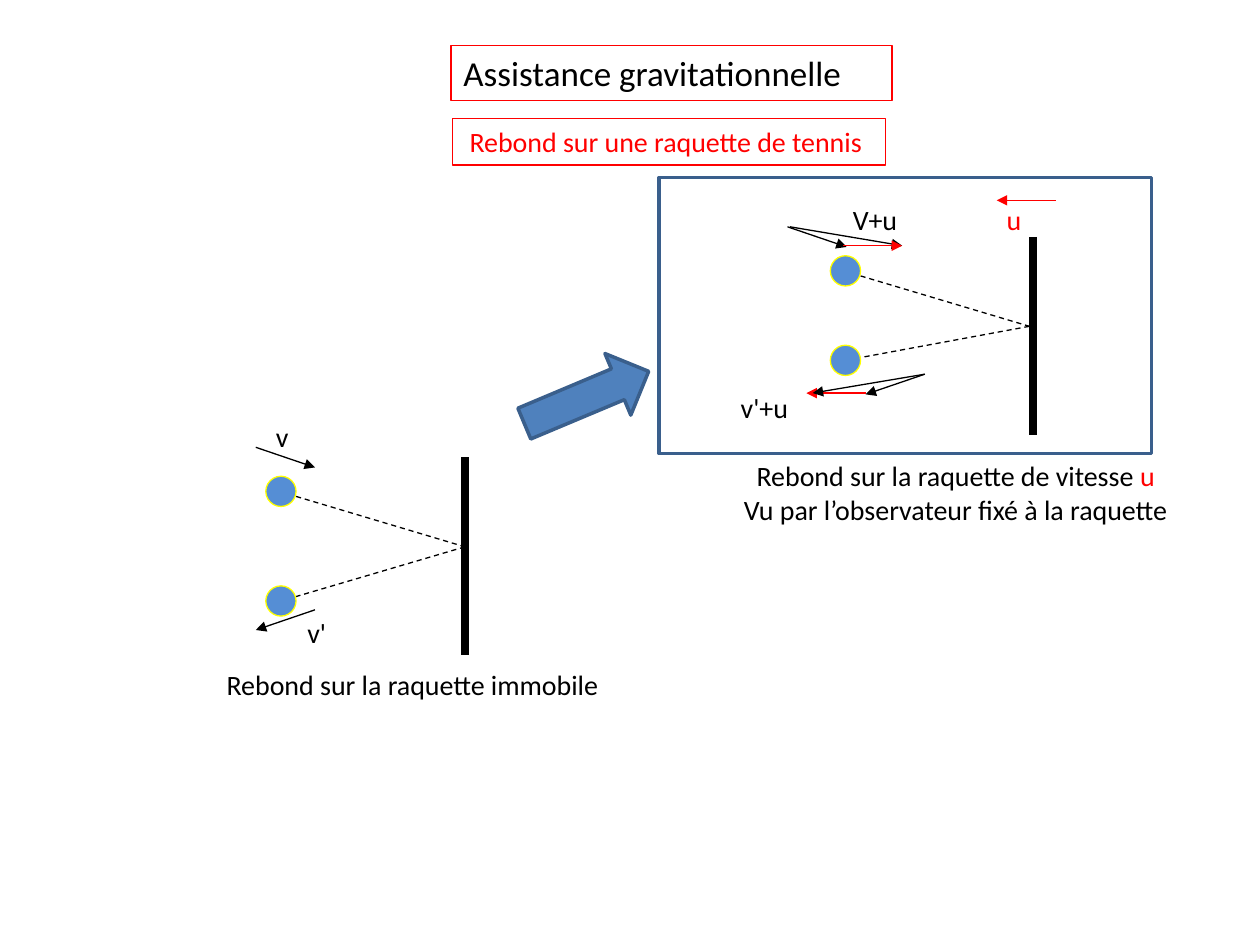
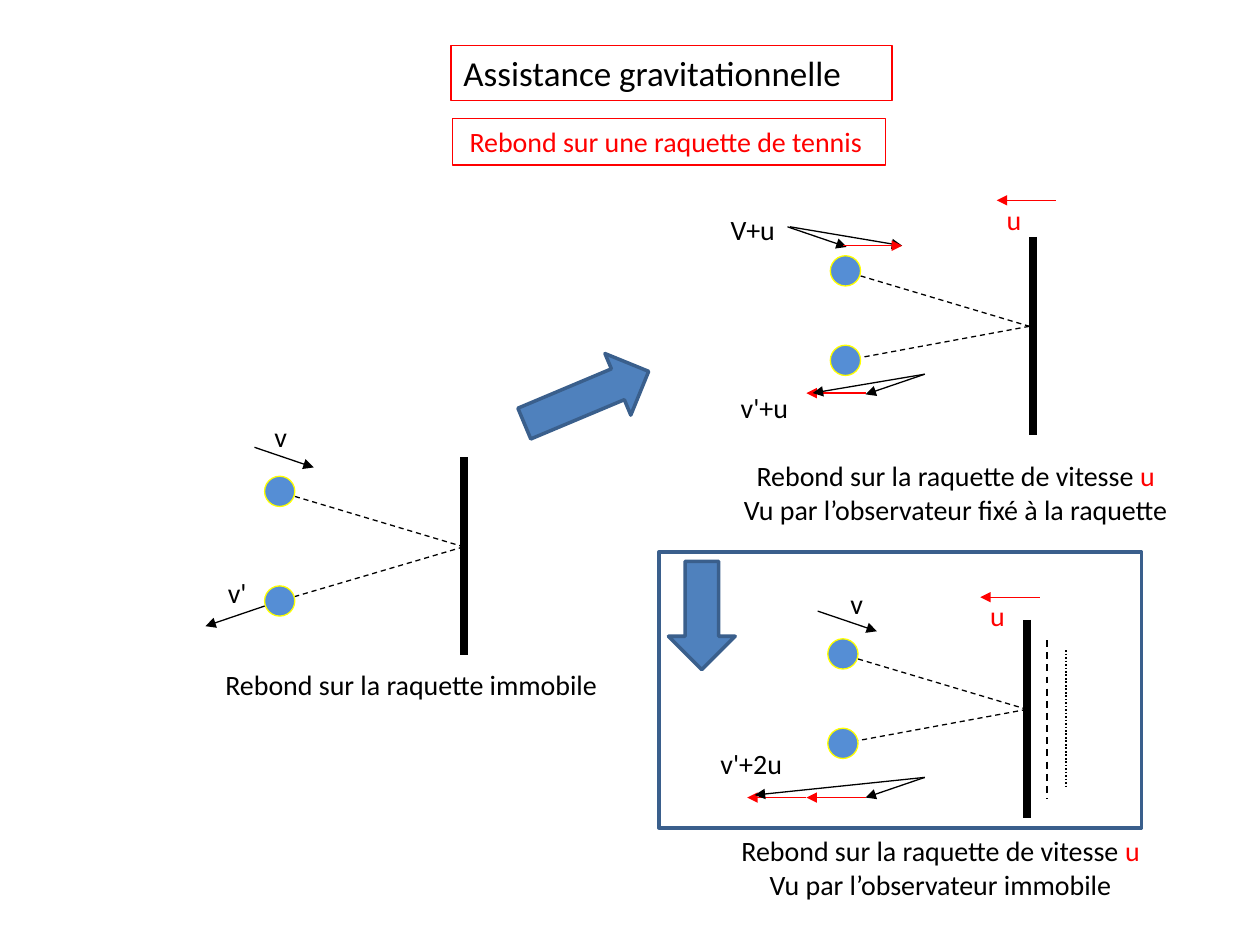
from lxml import etree
from pptx import Presentation
from pptx import util as u
from pptx.dml.color import RGBColor
from pptx.enum import dml, shapes, text
from pptx.oxml.ns import qn

BLACK = RGBColor(0x00, 0x00, 0x00)
RED = RGBColor(0xFF, 0x00, 0x00)
YELLOW = RGBColor(0xFF, 0xFF, 0x00)
BALL_BLUE = RGBColor(0x55, 0x8E, 0xD5)
ARROW_BLUE = RGBColor(0x4F, 0x81, 0xBD)
FRAME_BLUE = RGBColor(0x3A, 0x5F, 0x8C)

FONT = "Calibri"
LEFT, CENTER = text.PP_ALIGN.LEFT, text.PP_ALIGN.CENTER
DASH, DOTS = dml.MSO_LINE.DASH, dml.MSO_LINE.ROUND_DOT

# Velocity vectors and sizes, in inches
INCOMING = (0.47, 0.16)
RETURNING = (-0.47, 0.16)
RACKET_SPEED = (-0.47, 0)
BALL = 0.24
RACKET = 1.57
BALL_REACH = 1.58


class Sketch:
    """Holds the deck, the current slide and the drawing style."""

    def __init__(self):
        self.deck = Presentation()
        self.deck.slide_width = u.Inches(10)
        self.deck.slide_height = u.Inches(7.5)
        self.page = None

    def new_page(self):
        self.page = self.deck.slides.add_slide(self.deck.slide_layouts[6])

    def label(self, paragraphs, left, top, width, height=0.37, size=16,
              color=BLACK, align=LEFT, wrap=False, outline=None):
        """Each paragraph is a string or a list of (string, colour) spans."""
        box = self.page.shapes.add_textbox(*map(u.Inches, (left, top, width, height)))
        if outline is not None:
            box.line.color.rgb = outline
            box.line.width = u.Pt(0.75)
        frame = box.text_frame
        frame.word_wrap = wrap
        frame.auto_size = text.MSO_AUTO_SIZE.SHAPE_TO_FIT_TEXT
        for index, content in enumerate(paragraphs):
            para = frame.paragraphs[0] if index == 0 else frame.add_paragraph()
            para.alignment = align
            spans = [(content, color)] if isinstance(content, str) else content
            for words, shade in spans:
                span = para.add_run()
                span.text = words
                span.font.name = FONT
                span.font.size = u.Pt(size)
                span.font.color.rgb = shade

    def shape(self, kind, left, top, width, height, fill=None,
              line=FRAME_BLUE, weight=2, rotation=0):
        figure = self.page.shapes.add_shape(
            kind, *map(u.Inches, (left, top, width, height)))
        figure.shadow.inherit = False
        figure.rotation = rotation
        if fill is None:
            figure.fill.background()
        else:
            figure.fill.solid()
            figure.fill.fore_color.rgb = fill
        figure.line.color.rgb = line
        figure.line.width = u.Pt(weight)

    def line(self, start, end, color=BLACK, weight=0.75, dash=None, head=False):
        connector = self.page.shapes.add_connector(
            shapes.MSO_CONNECTOR.STRAIGHT, *map(u.Inches, (*start, *end)))
        connector.line.color.rgb = color
        connector.line.width = u.Pt(weight)
        if dash is not None:
            connector.line.dash_style = dash
        properties = connector._element.spPr
        if head:
            etree.SubElement(properties.find(qn("a:ln")), qn("a:tailEnd"),
                             type="triangle")
        etree.SubElement(properties, qn("a:effectLst"))

    def vector(self, start, delta, color=BLACK):
        end = (start[0] + delta[0], start[1] + delta[1])
        self.line(start, end, color=color, head=True)

    def block_arrow(self, left, top, width, rotation):
        self.shape(shapes.MSO_SHAPE.RIGHT_ARROW, left, top, width, 0.53,
                   fill=ARROW_BLUE, rotation=rotation)

    def frame(self, left, top, width):
        self.shape(shapes.MSO_SHAPE.RECTANGLE, left, top, width, 2.19)

    def rebound(self, x, top, ball_gap, impact_gap=0):
        """Racket at x, with a ball before and after it bounces."""
        self.line((x, top), (x, top + RACKET), weight=4.5)
        impact = (x - impact_gap, top + 0.71)
        ball_left = impact[0] - BALL_REACH
        first, second = top + 0.15, top + 0.15 + ball_gap
        self.line((ball_left + BALL, first + 0.16), impact, dash=DASH)
        self.line(impact, (ball_left + BALL / 2, second + BALL / 2), dash=DASH)
        for ball_top in (first, second):
            self.shape(shapes.MSO_SHAPE.OVAL, ball_left, ball_top, BALL, BALL,
                       fill=BALL_BLUE, line=YELLOW, weight=0.75)

    def caption(self, observer, left, top, width):
        self.label([[("Rebond sur la raquette de vitesse ", BLACK), ("u", RED)],
                    f"Vu par l’observateur {observer}"],
                   left, top, width, 0.64, align=CENTER)

    # Parts found on both slides
    def header(self):
        self.label(["Assistance gravitationnelle"], 3.58, 0.36, 3.5, 0.44,
                   size=20, outline=RED)
        self.label(["Rebond sur une raquette de tennis "], 3.59, 0.94, 3.44,
                   color=RED, align=CENTER, wrap=True, outline=RED)

    def still_racket(self, x, return_start, return_label):
        self.rebound(x, 3.63, ball_gap=0.87)
        self.vector((x - 1.66, 3.55), INCOMING)
        self.label(["v"], x - 1.6, 3.28, 0.31)
        self.vector(return_start, RETURNING)
        self.label(["v'"], *return_label, 0.35)
        self.label(["Rebond sur la raquette immobile"], x - 1.99, 5.25, 3.19)

    def racket_frame_view(self, sum_label):
        self.rebound(8.2, 1.88, ball_gap=0.71, impact_gap=0.03)
        self.caption("fixé à la raquette", 5.78, 3.59, 3.61)
        self.vector((8.38, 1.59), RACKET_SPEED, RED)
        self.label(["u"], 7.89, 1.56, 0.32, color=RED)
        # Incoming sum
        self.vector((6.25, 1.8), INCOMING)
        self.vector((6.27, 1.8), (0.89, 0.15))
        self.vector((6.69, 1.95), (0.47, 0), RED)
        self.label(["V+u"], *sum_label, 0.56)
        # Returning sum
        self.vector((7.34, 2.97), RETURNING)
        self.vector((6.87, 3.12), RACKET_SPEED, RED)
        self.vector((7.34, 2.97), (-0.89, 0.15))
        self.label(["v'+u"], 5.78, 3.05, 0.58)
        self.block_arrow(4.12, 2.89, 1.07, rotation=337.2)

    def still_observer_view(self):
        self.rebound(8.15, 4.92, ball_gap=0.71)
        self.vector((6.49, 4.85), INCOMING)
        self.label(["v"], 6.65, 4.61, 0.31)
        # Trail of the moving racket
        self.line((8.31, 5.08), (8.31, 6.34), weight=1, dash=DASH)
        self.line((8.46, 5.16), (8.46, 6.26), weight=1, dash=DOTS)
        self.vector((8.25, 4.74), RACKET_SPEED, RED)
        self.label(["u"], 7.76, 4.7, 0.32, color=RED)
        # Returning sum with twice the racket speed
        self.vector((7.34, 6.17), RETURNING)
        for step in range(2):
            self.vector((6.87 - 0.47 * step, 6.33), RACKET_SPEED, RED)
        self.vector((7.34, 6.17), (-1.35, 0.14))
        self.label(["v'+2u"], 5.62, 5.88, 0.7)
        self.caption("immobile", 5.76, 6.57, 3.41)
        self.block_arrow(5.14, 4.62, 0.86, rotation=90)


def main():
    sketch = Sketch()

    # Slide 1: bounce seen from the racket
    sketch.new_page()
    sketch.header()
    sketch.still_racket(3.69, return_start=(2.5, 4.84), return_label=(2.34, 4.84))
    sketch.racket_frame_view(sum_label=(6.67, 1.56))
    sketch.frame(5.23, 1.41, 3.91)

    # Slide 2: bounce seen by the still observer
    sketch.new_page()
    sketch.header()
    sketch.still_racket(3.68, return_start=(2.1, 4.81), return_label=(1.71, 4.52))
    sketch.racket_frame_view(sum_label=(5.7, 1.64))
    sketch.still_observer_view()
    sketch.frame(5.23, 4.38, 3.83)

    sketch.deck.save("out.pptx")


if __name__ == "__main__":
    main()
